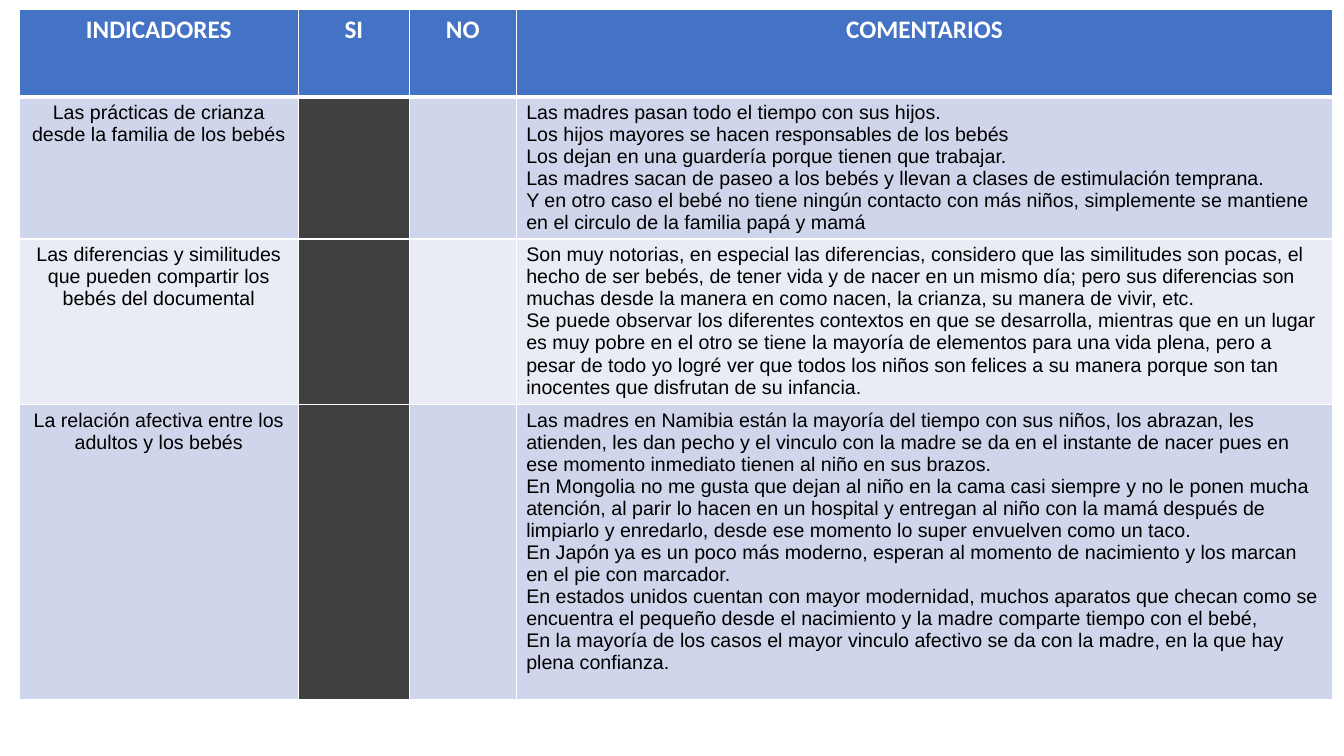
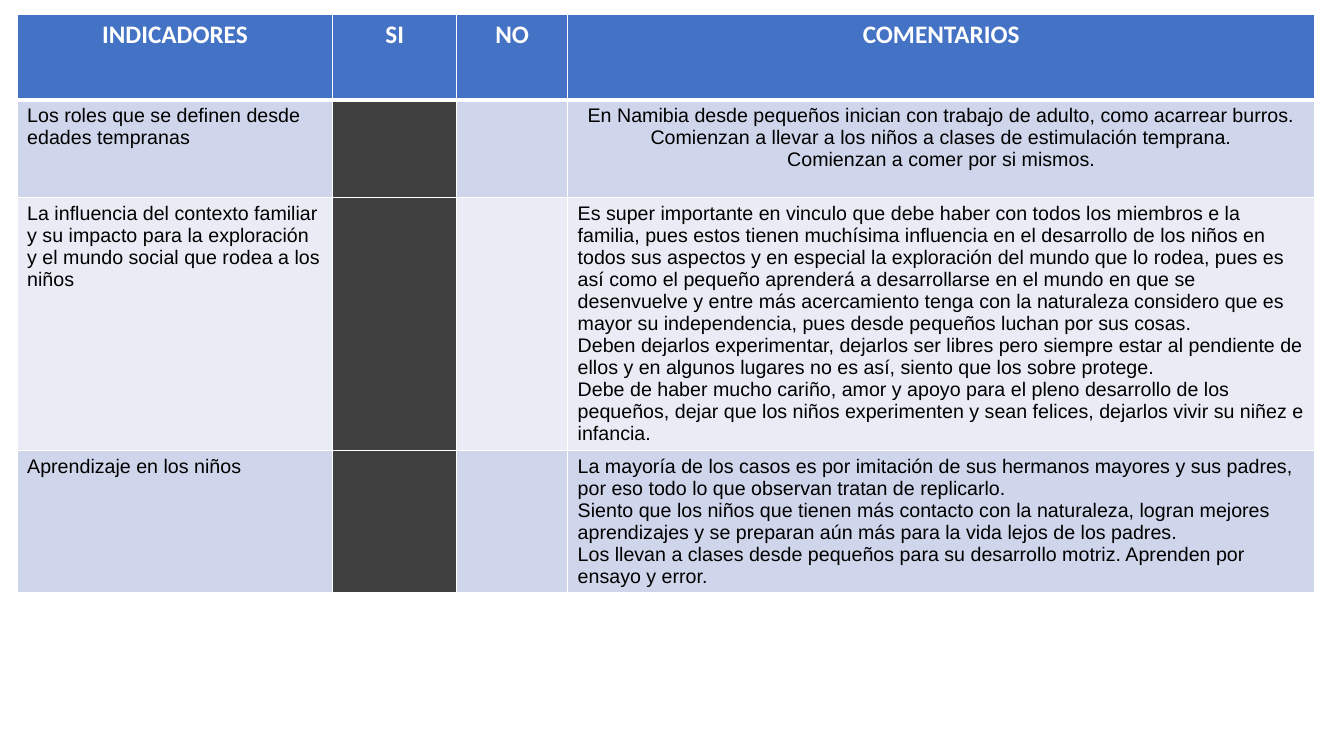
from lxml import etree
from pptx import Presentation
from pptx.dml.color import RGBColor
from pptx.enum.text import PP_ALIGN
from pptx.oxml.ns import qn
from pptx.util import Pt

PX = 9144  # 100 px to the inch
CENTER, LEFT = PP_ALIGN.CENTER, PP_ALIGN.LEFT

WHITE = RGBColor(0xFF, 0xFF, 0xFF)
BLACK = RGBColor(0x00, 0x00, 0x00)
HEADER_BLUE = RGBColor(0x44, 0x72, 0xC4)
BANDS = (RGBColor(0xCF, 0xD5, 0xEA), RGBColor(0xE9, 0xEB, 0xF5))
MARKED = RGBColor(0x40, 0x40, 0x40)

HEADERS = ("INDICADORES", "SI", "NO", "COMENTARIOS")
YES_COLUMN = 1

# Each row: height, indicator, comment paragraphs, comment alignment
TABLES = [
    {
        "origin": (19, 9),
        "columns": (277, 110, 106, 810),
        "header_height": 87,
        "indicator_alignment": CENTER,
        "rows": [
            (141, "Las prácticas de crianza desde la familia de los bebés", [
                "Las madres pasan todo el tiempo con sus hijos.",
                "Los hijos mayores se hacen responsables de los bebés",
                "Los dejan en una guardería porque tienen que trabajar.",
                "Las madres sacan de paseo a los bebés y llevan a clases de "
                "estimulación temprana.",
                "Y en otro caso el bebé no tiene ningún contacto con más niños, "
                "simplemente se mantiene en el circulo de la familia papá y mamá",
            ], LEFT),
            (164, "Las diferencias y similitudes que pueden compartir los bebés "
                  "del documental", [
                "Son muy notorias, en especial las diferencias, considero que las "
                "similitudes son pocas, el hecho de ser bebés, de tener vida y de "
                "nacer en un mismo día; pero sus diferencias son muchas desde la "
                "manera en como nacen, la crianza, su manera de vivir, etc.",
                "Se puede observar los diferentes contextos en que se desarrolla, "
                "mientras que en un lugar es muy pobre en el otro se tiene la "
                "mayoría de elementos para una vida plena, pero a pesar de todo yo "
                "logré ver que todos los niños son felices a su manera porque son "
                "tan inocentes que disfrutan de su infancia.",
            ], LEFT),
            (293, "La relación afectiva entre los adultos y los bebés", [
                "Las madres en Namibia están la mayoría del tiempo con sus niños, "
                "los abrazan, les atienden, les dan pecho y el vinculo con la madre "
                "se da en el instante de nacer pues en ese momento inmediato tienen "
                "al niño en sus brazos.",
                "En Mongolia no me gusta que dejan al niño en la cama casi siempre y "
                "no le ponen mucha atención, al parir lo hacen en un hospital y "
                "entregan al niño con la mamá después de limpiarlo y enredarlo, "
                "desde ese momento lo super envuelven como un taco.",
                "En Japón ya es un poco más moderno, esperan al momento de "
                "nacimiento y los marcan en el pie con marcador.",
                "En estados unidos cuentan con mayor modernidad, muchos aparatos que "
                "checan como se encuentra el pequeño desde el nacimiento y la madre "
                "comparte tiempo con el bebé,",
                "En la mayoría de los casos el mayor vinculo afectivo se da con la "
                "madre, en la que hay plena confianza.",
            ], LEFT),
        ],
    },
    {
        "origin": (17, 14),
        "columns": (313, 123, 110, 741),
        "header_height": 85,
        "indicator_alignment": LEFT,
        "rows": [
            (97, "Los roles que se definen desde edades tempranas", [
                "En Namibia desde pequeños inician con trabajo de adulto, como "
                "acarrear burros.",
                "Comienzan a llevar a los niños a clases de estimulación temprana.",
                "Comienzan a comer por si mismos.",
            ], CENTER),
            (251, "La influencia del contexto familiar y su impacto para la "
                  "exploración y el mundo social que rodea a los niños", [
                "Es super importante en vinculo que debe haber con todos los "
                "miembros e la familia, pues estos tienen muchísima influencia en el "
                "desarrollo de los niños en todos sus aspectos y en especial la "
                "exploración del mundo que lo rodea, pues es así como el pequeño "
                "aprenderá a desarrollarse en el mundo en que se desenvuelve y entre "
                "más acercamiento tenga con la naturaleza considero que es mayor su "
                "independencia, pues desde pequeños luchan por sus cosas.",
                "Deben dejarlos experimentar, dejarlos ser libres pero siempre estar "
                "al pendiente de ellos y en algunos lugares no es así, siento que "
                "los sobre protege.",
                "Debe de haber mucho cariño, amor y apoyo para el pleno desarrollo "
                "de los pequeños, dejar que los niños experimenten y sean felices, "
                "dejarlos vivir su niñez e infancia.",
            ], LEFT),
            (141, "Aprendizaje en los niños", [
                "La mayoría de los casos es por imitación de sus hermanos mayores y "
                "sus padres, por eso todo lo que observan tratan de replicarlo.",
                "Siento que los niños que tienen más contacto con la naturaleza, "
                "logran mejores aprendizajes y se preparan aún más para la vida "
                "lejos de los padres.",
                "Los llevan a clases desde pequeños para su desarrollo motriz. "
                "Aprenden por ensayo y error.",
            ], LEFT),
        ],
    },
]


def style_cell(cell, fill, top=1, bottom=1):
    """Give a cell white borders (widths in points) and a solid fill."""
    properties = cell._tc.get_or_add_tcPr()
    for side, width in (("L", 1), ("R", 1), ("T", top), ("B", bottom)):
        line = etree.SubElement(properties, qn(f"a:ln{side}"), w=str(Pt(width)))
        solid = etree.SubElement(line, qn("a:solidFill"))
        etree.SubElement(solid, qn("a:srgbClr"), val=str(WHITE))
    cell.fill.solid()
    cell.fill.fore_color.rgb = fill


def write_cell(cell, paragraphs, alignment, font_name, size, color, bold=False):
    cell.text_frame.text = "\n".join(paragraphs)
    for paragraph in cell.text_frame.paragraphs:
        paragraph.alignment = alignment
        paragraph.font.name = font_name
        paragraph.font.size = Pt(size)
        paragraph.font.bold = bold
        paragraph.font.color.rgb = color


presentation = Presentation()
presentation.slide_width = 1333 * PX
presentation.slide_height = 750 * PX
blank_layout = presentation.slide_layouts[6]

for content in TABLES:
    slide = presentation.slides.add_slide(blank_layout)

    # Table grid
    left, top = content["origin"]
    widths = content["columns"]
    heights = [content["header_height"]] + [row[0] for row in content["rows"]]
    table = slide.shapes.add_table(
        len(heights), len(widths), left * PX, top * PX,
        sum(widths) * PX, sum(heights) * PX).table
    for column, width in zip(table.columns, widths):
        column.width = width * PX
    for row, height in zip(table.rows, heights):
        row.height = height * PX

    # Header row
    for column_index, header in enumerate(HEADERS):
        cell = table.cell(0, column_index)
        style_cell(cell, HEADER_BLUE, bottom=3)
        write_cell(cell, [header], CENTER, "Calibri", 18, WHITE, bold=True)

    # Indicator rows, with the "SI" column marked
    for row_index, (_, indicator, comments, alignment) in enumerate(content["rows"], 1):
        band = BANDS[(row_index - 1) % 2]
        for column_index in range(len(HEADERS)):
            style_cell(table.cell(row_index, column_index),
                       MARKED if column_index == YES_COLUMN else band,
                       top=3 if row_index == 1 else 1)
        write_cell(table.cell(row_index, 0), [indicator],
                   content["indicator_alignment"], "Arial", 14, BLACK)
        write_cell(table.cell(row_index, 3), comments, alignment, "Arial", 14, BLACK)

presentation.save("out.pptx")
